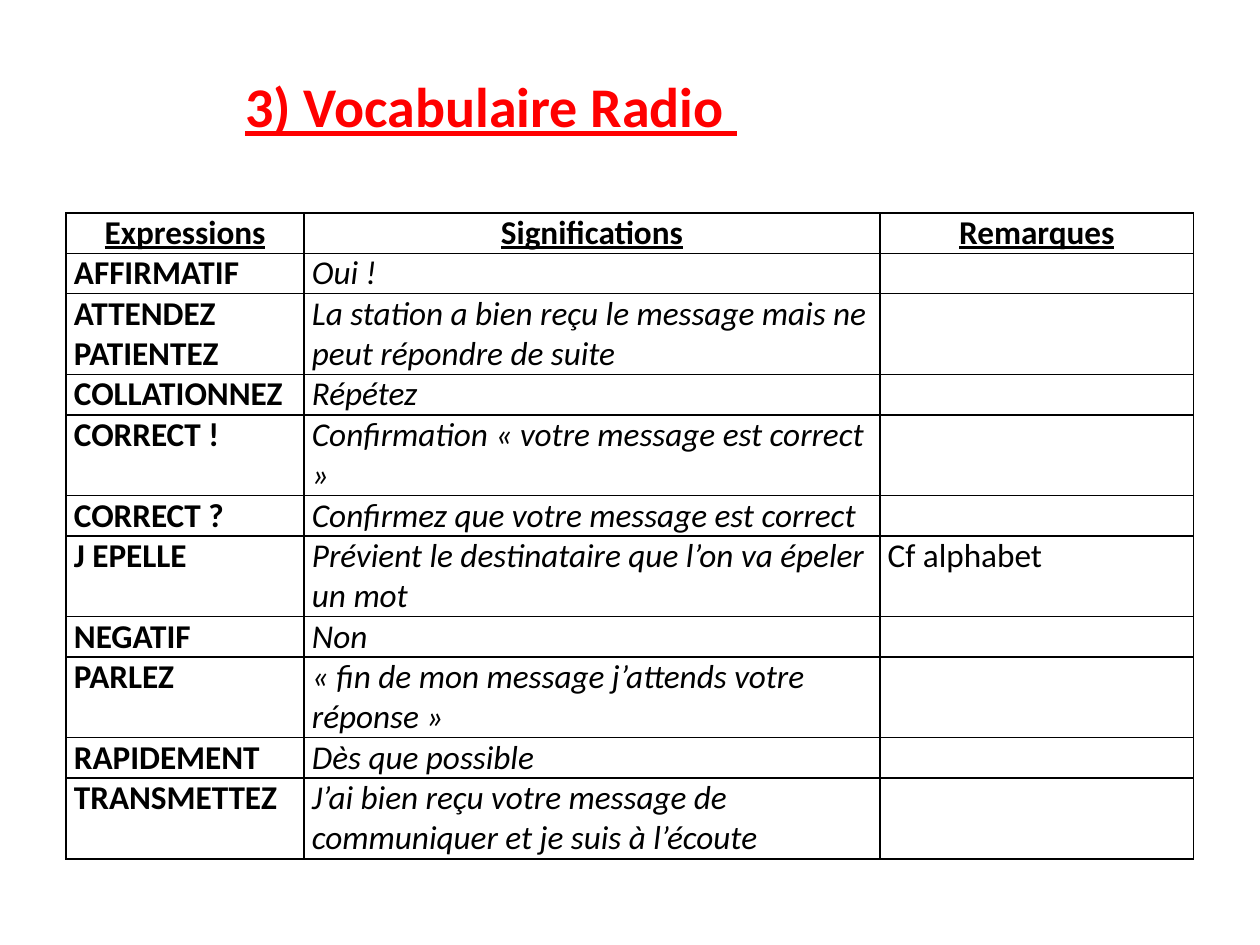
"""Build the radio vocabulary slide: a title above a three-column table."""
from dataclasses import dataclass

from lxml.etree import SubElement
from pptx import Presentation
from pptx.dml.color import RGBColor
from pptx.enum.text import MSO_ANCHOR, PP_ALIGN
from pptx.oxml.ns import qn
from pptx.util import Pt


@dataclass(frozen=True)
class Theme:
    font: str = "Calibri"
    title_size: float = 32
    body_size: float = 19
    title: str = "FF0000"
    ink: str = "000000"
    border: float = 1


theme = Theme()


def format_text(tf, size, color, bold=False, italic=False, underline=False, align=None):
    for p in tf.paragraphs:
        p.alignment = align
        for r in p.runs:
            r.font.name, r.font.size = theme.font, Pt(size)
            r.font.color.rgb = RGBColor.from_string(color)
            r.font.bold, r.font.italic, r.font.underline = bold, italic, underline


def add_borders(cell):
    tc_pr = cell._tc.get_or_add_tcPr()
    for side in ("a:lnL", "a:lnR", "a:lnT", "a:lnB"):
        ln = SubElement(tc_pr, qn(side), w=str(Pt(theme.border)))
        SubElement(SubElement(ln, qn("a:solidFill")), qn("a:srgbClr"), val=theme.ink)


line_height = 22.4
column_widths = (136, 329, 179.4)
rows = [
    (1, "Expressions", "Significations", "Remarques"),
    (1, "AFFIRMATIF", "Oui !", ""),
    (2, "ATTENDEZ\nPATIENTEZ", "La station a bien reçu le message mais ne peut répondre de suite", ""),
    (1, "COLLATIONNEZ", "Répétez", ""),
    (2, "CORRECT !", "Confirmation « votre message est correct »", ""),
    (1, "CORRECT ?", "Confirmez que votre message est correct", ""),
    (2, "J EPELLE", "Prévient le destinataire que l’on va épeler un mot", "Cf alphabet"),
    (1, "NEGATIF", "Non", ""),
    (2, "PARLEZ", "« fin de mon message j’attends votre réponse »", ""),
    (1, "RAPIDEMENT", "Dès que possible", ""),
    (2, "TRANSMETTEZ", "J’ai bien reçu votre message de communiquer et je suis à l’écoute", ""),
]

prs = Presentation()
prs.slide_width, prs.slide_height = Pt(720), Pt(540)
s = prs.slides.add_slide(prs.slide_layouts[6])

table_height = line_height * sum(row[0] for row in rows)
table = s.shapes.add_table(
    len(rows), len(column_widths), Pt(37.8), Pt(121.7), Pt(sum(column_widths)), Pt(table_height)
).table
table.horz_banding = False
for column, width in zip(table.columns, column_widths):
    column.width = Pt(width)

for i, (lines, *texts) in enumerate(rows):
    table.rows[i].height = Pt(line_height * lines)
    header = i == 0
    for j, text in enumerate(texts):
        cell = table.cell(i, j)
        add_borders(cell)
        cell.fill.background()
        cell.margin_left = cell.margin_right = Pt(4.5)
        cell.margin_top = cell.margin_bottom = Pt(0)
        cell.vertical_anchor = MSO_ANCHOR.TOP
        cell.text_frame.text = text
        format_text(
            cell.text_frame, theme.body_size, theme.ink,
            bold=header or j == 0, italic=not header and j == 1, underline=header,
            align=PP_ALIGN.CENTER if header else PP_ALIGN.LEFT,
        )

title = s.shapes.add_textbox(Pt(8.6), Pt(37.4), Pt(544.3), Pt(46))
title.text_frame.word_wrap = True
title.text_frame.text = "3) Vocabulaire Radio "
format_text(
    title.text_frame, theme.title_size, theme.title,
    bold=True, underline=True, align=PP_ALIGN.CENTER,
)

prs.save("out.pptx")
